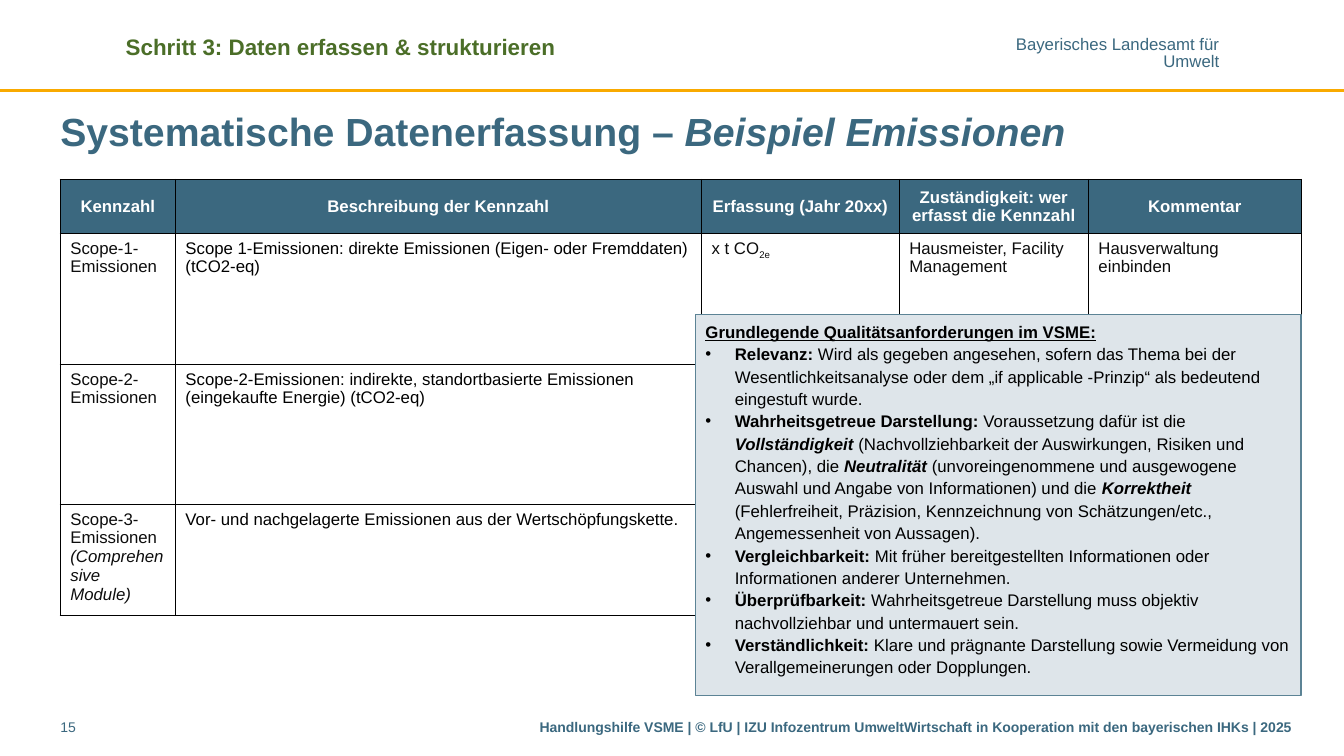
from collections import namedtuple
from dataclasses import dataclass

from lxml import etree
from pptx import Presentation
from pptx import util as u
from pptx.dml.color import RGBColor
from pptx.enum import shapes, text
from pptx.oxml.ns import qn

Box = namedtuple("Box", "x y w h")
LEFT, MID, RIGHT = text.PP_ALIGN.LEFT, text.PP_ALIGN.CENTER, text.PP_ALIGN.RIGHT


@dataclass(frozen=True)
class Theme:
    font: str = "Arial"
    blue: str = "3B687F"
    green: str = "4B6E28"
    gold: str = "F9AA00"
    black: str = "000000"
    ink: str = "0D0D0D"
    white: str = "FFFFFF"
    pale: str = "DEE5EA"
    edge: str = "5C8395"
    title: int = 28
    step: int = 16
    body: int = 12
    small: int = 10


THEME = Theme()

HEADS = ["Kennzahl", "Beschreibung der Kennzahl", "Erfassung (Jahr 20xx) ",
         "Zuständigkeit: wer erfasst die Kennzahl", "Kommentar"]
# A paragraph is a string or a list of (text, style) runs:
# b = bold, i = italic, u = underlined, s = subscript
ROWS = [
    ["Scope-1- Emissionen",
     "Scope 1-Emissionen: direkte Emissionen (Eigen- oder Fremddaten) (tCO2-eq)",
     [("x t CO", ""), ("2e", "s")],
     "Hausmeister, Facility Management", "Hausverwaltung einbinden"],
    ["Scope-2- Emissionen",
     "Scope-2-Emissionen: indirekte, standortbasierte Emissionen "
     "(eingekaufte Energie) (tCO2-eq)", "", "", ""],
    [[("Scope-3- Emissionen ", ""), ("(Comprehensive Module)", "i")],
     "Vor- und nachgelagerte Emissionen aus der Wertschöpfungskette.", "", "", ""],
]
COLS = [2.9, 13.26, 4.98, 4.77, 5.36]
HIGHS = [1.37, 3.3, 3.53, 2.64]

RULES = [
    [("Relevanz: ", "b"),
     ("Wird als gegeben angesehen, sofern das Thema bei der Wesentlichkeitsanalyse "
      "oder dem „if applicable -Prinzip“ als bedeutend eingestuft wurde.", "")],
    [("Wahrheitsgetreue Darstellung: ", "b"), ("Voraussetzung dafür ist die ", ""),
     ("Vollständigkeit ", "bi"),
     ("(Nachvollziehbarkeit der Auswirkungen, Risiken und Chancen), die ", ""),
     ("Neutralität", "bi"),
     (" (unvoreingenommene und ausgewogene Auswahl und Angabe von Informationen) "
      "und die ", ""),
     ("Korrektheit", "bi"),
     (" (Fehlerfreiheit, Präzision, Kennzeichnung von Schätzungen/etc., "
      "Angemessenheit von Aussagen).", "")],
    [("Vergleichbarkeit: ", "b"),
     ("Mit früher bereitgestellten Informationen oder Informationen anderer "
      "Unternehmen.", "")],
    [("Überprüfbarkeit: ", "b"),
     ("Wahrheitsgetreue Darstellung muss objektiv nachvollziehbar und untermauert "
      "sein.", "")],
    [("Verständlichkeit: ", "b"),
     ("Klare und prägnante Darstellung sowie Vermeidung von Verallgemeinerungen "
      "oder Dopplungen.", "")],
]


def tint(code):
    return RGBColor.from_string(code)


def place(box):
    return [u.Cm(side) for side in box]


def bullet(para):
    props = para._p.get_or_add_pPr()
    props.set("marL", str(u.Cm(0.74)))
    props.set("indent", str(-u.Cm(0.74)))
    etree.SubElement(props, qn("a:buFont"), typeface=THEME.font)
    etree.SubElement(props, qn("a:buChar"), char="•")


def write(frame, paras, size=THEME.body, color=THEME.black, style="", align=LEFT,
          lead=None, first=0):
    """Fill a text frame; paragraphs from index `first` on get bullets if first > 0."""
    frame.word_wrap = True
    for num, runs in enumerate(paras):
        para = frame.paragraphs[0] if num == 0 else frame.add_paragraph()
        if first and num >= first:
            bullet(para)
        para.alignment = align
        if lead:
            para.line_spacing = lead
        for words, marks in [(runs, "")] if isinstance(runs, str) else runs:
            run = para.add_run()
            run.text = words
            font, marks = run.font, marks + style
            font.name, font.size, font.color.rgb = THEME.font, u.Pt(size), tint(color)
            font.bold, font.italic = "b" in marks, "i" in marks
            font.underline = "u" in marks
            if "s" in marks:
                font._element.set("baseline", "-25000")


def label(slide, box, paras, pad=(0.25, 0.13), anchor=text.MSO_ANCHOR.TOP, **form):
    frame = slide.shapes.add_textbox(*place(box)).text_frame
    frame.margin_left = frame.margin_right = u.Cm(pad[0])
    frame.margin_top = frame.margin_bottom = u.Cm(pad[1])
    frame.vertical_anchor = anchor
    write(frame, paras, **form)


def header(slide, box):
    # Gold rule along the lower edge
    base = box.y + box.h
    ends = place((box.x, base, box.x + box.w, base))
    rule = slide.shapes.add_connector(shapes.MSO_CONNECTOR.STRAIGHT, *ends)
    rule.line.color.rgb, rule.line.width = tint(THEME.gold), u.Pt(2)
    etree.SubElement(rule._element.spPr, qn("a:effectLst"))
    # Office name and step
    label(slide, Box(box.x + 25.58, box.y + 0.93, 5.15, 0.86),
          ["Bayerisches Landesamt für", "Umwelt"], pad=(0, 0),
          color=THEME.blue, align=RIGHT, lead=0.85)
    label(slide, Box(box.x + 2.92, box.y + 0.71, 15.6, 0.94),
          ["Schritt 3: Daten erfassen & strukturieren"],
          size=THEME.step, color=THEME.green, style="b")


def title(slide, box):
    label(slide, box, [[("Systematische Datenerfassung – ", ""),
                        ("Beispiel Emissionen", "i")]],
          pad=(0, 0.13), anchor=text.MSO_ANCHOR.MIDDLE,
          size=THEME.title, color=THEME.blue, style="b")


def border(cell):
    props = cell._tc.get_or_add_tcPr()
    for side in ("lnL", "lnR", "lnT", "lnB"):
        line = etree.SubElement(props, qn("a:" + side), w=str(u.Pt(1)))
        fill = etree.SubElement(line, qn("a:solidFill"))
        etree.SubElement(fill, qn("a:srgbClr"), val=THEME.black)


def grid(slide, box):
    table = slide.shapes.add_table(len(HIGHS), len(COLS), *place(box)).table
    for col, wide in zip(table.columns, COLS):
        col.width = u.Cm(wide)
    for row, high in zip(table.rows, HIGHS):
        row.height = u.Cm(high)
    for r, row in enumerate([HEADS] + ROWS):
        for c, words in enumerate(row):
            cell, head = table.cell(r, c), r == 0
            border(cell)
            cell.fill.solid()
            cell.fill.fore_color.rgb = tint(THEME.blue if head else THEME.white)
            if head:
                cell.vertical_anchor = text.MSO_ANCHOR.MIDDLE
                write(cell.text_frame, [words], color=THEME.white, style="b", align=MID)
            elif words:
                write(cell.text_frame, [words],
                      color=THEME.black if c == 1 else THEME.ink)


def panel(slide, box):
    card = slide.shapes.add_shape(shapes.MSO_SHAPE.RECTANGLE, *place(box))
    card.shadow.inherit = False
    card.fill.solid()
    card.fill.fore_color.rgb = tint(THEME.pale)
    card.line.color.rgb, card.line.width = tint(THEME.edge), u.Pt(1)
    card.text_frame.vertical_anchor = text.MSO_ANCHOR.TOP
    intro = [("Grundlegende Qualitätsanforderungen im VSME:", "bu")]
    write(card.text_frame, [intro] + RULES, lead=u.Pt(16), first=1)


def footer(slide, box):
    label(slide, box._replace(w=1.78), ["15"], pad=(0, 0.13),
          size=THEME.small, color=THEME.blue)
    label(slide, Box(box.x + 11.61, box.y, box.w - 11.61, box.h),
          ["Handlungshilfe VSME | © LfU | IZU Infozentrum UmweltWirtschaft "
           "in Kooperation mit den bayerischen IHKs | 2025"],
          size=THEME.small, color=THEME.blue, style="b", align=RIGHT)


def main():
    deck = Presentation()
    deck.slide_width, deck.slide_height = u.Cm(33.87), u.Cm(19.05)
    slide = deck.slides.add_slide(deck.slide_layouts[6])
    left, wide = 1.52, sum(COLS)
    header(slide, Box(0, 0, 33.87, 2.29))
    title(slide, Box(left, 2.59, wide, 1.4))
    grid(slide, Box(left, 4.52, wide, sum(HIGHS)))
    footer(slide, Box(left, 17.98, wide, 0.79))
    panel(slide, Box(17.53, 7.92, 15.26, 9.6))
    deck.save("out.pptx")


if __name__ == "__main__":
    main()
